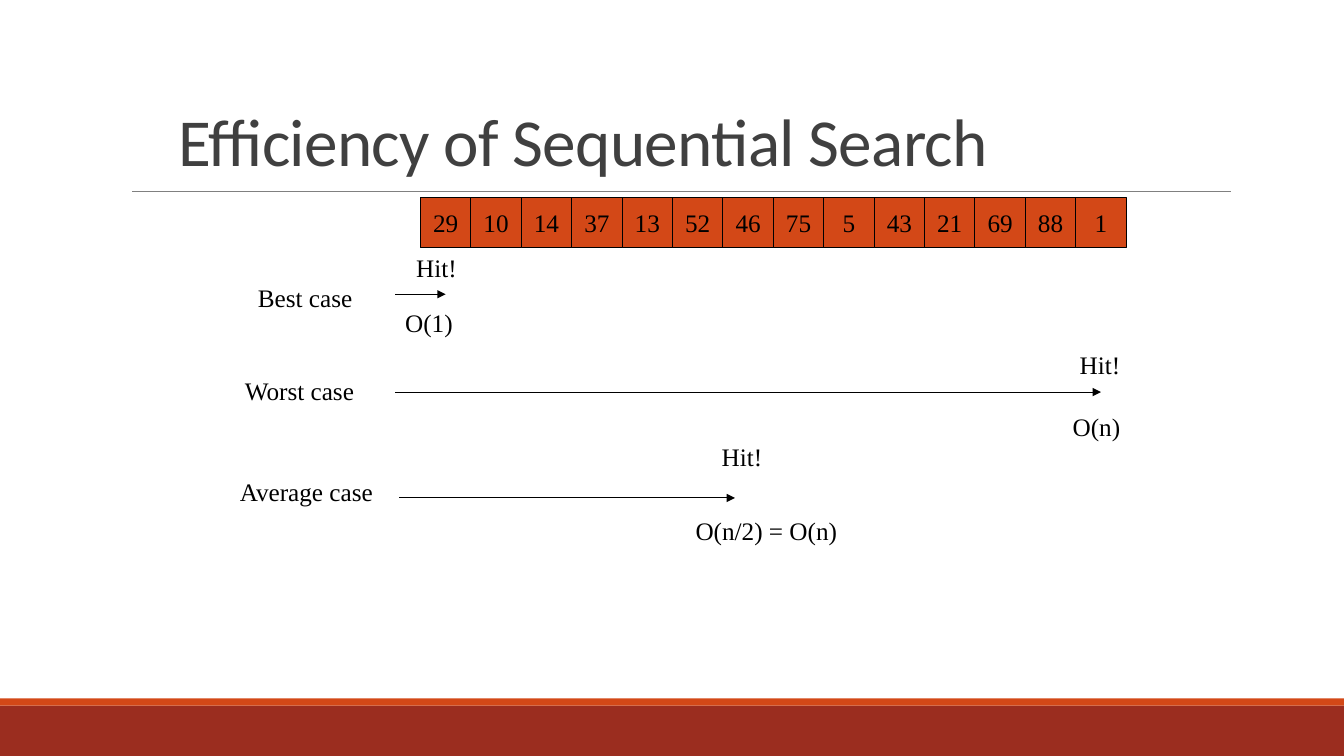
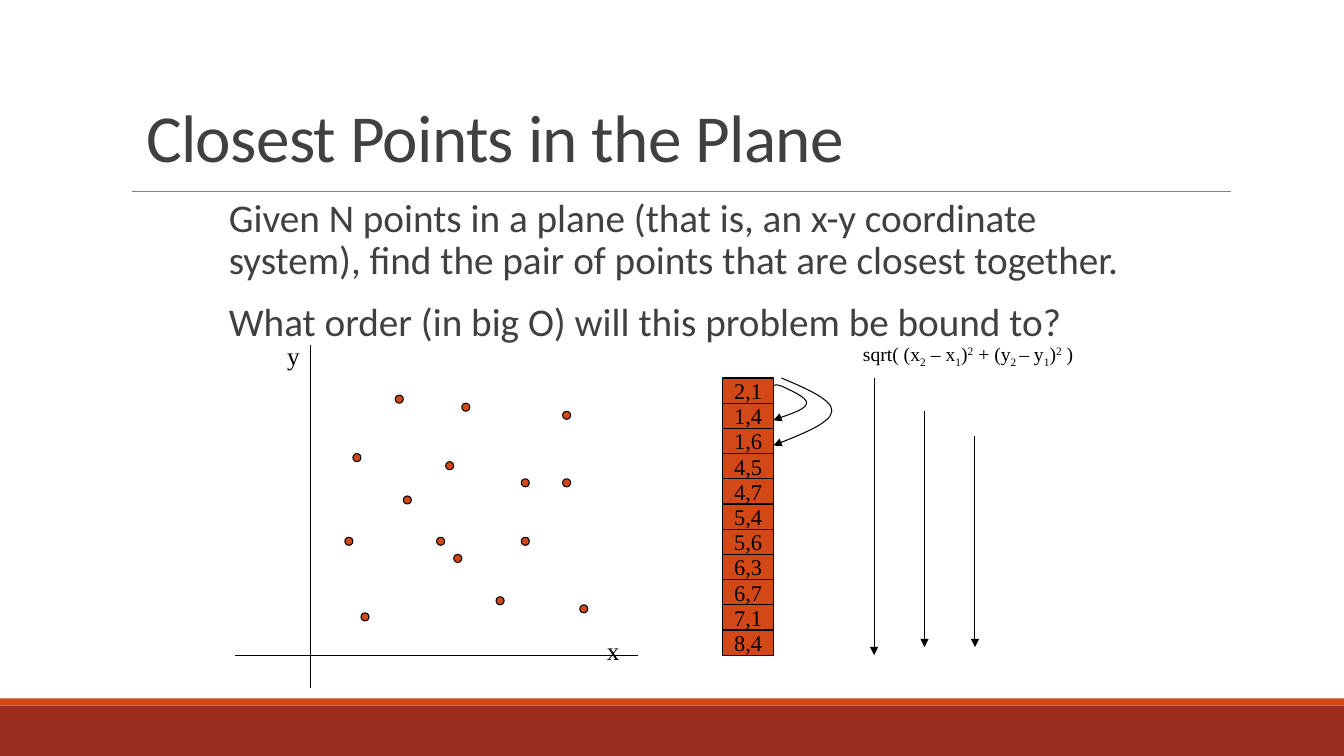
import dataclasses

import lxml.etree
import pptx
import pptx.dml.color
import pptx.enum.shapes
import pptx.enum.text
import pptx.oxml.ns
import pptx.util

Inches = pptx.util.Inches
Pt = pptx.util.Pt
ShapeType = pptx.enum.shapes.MSO_SHAPE
Align = pptx.enum.text.PP_ALIGN
Anchor = pptx.enum.text.MSO_ANCHOR
AutoSize = pptx.enum.text.MSO_AUTO_SIZE


@dataclasses.dataclass(frozen=True)
class Theme:
    accent: str = "D34817"
    footer: str = "9B2D1F"
    rule: str = "808080"
    heading: str = "404040"
    ink: str = "000000"
    sans: str = "Calibri"
    serif: str = "Times New Roman"
    title_size: float = 48
    body_size: float = 28
    label_size: float = 18
    cell_size: float = 16
    formula_size: float = 14
    line_width: float = 0.75
    rule_width: float = 0.5


THEME = Theme()
SLIDE_WIDTH, SLIDE_HEIGHT = 13.33, 7.5
BANDS = [((0, 7, SLIDE_WIDTH, 0.5), THEME.footer), ((0, 6.93, SLIDE_WIDTH, 0.07), THEME.accent)]
TITLE_RULE = ((1.31, 1.9), (12.21, 1.9))

SEARCH_TITLE = "Efficiency of Sequential Search"
SEARCH_VALUES = [29, 10, 14, 37, 13, 52, 46, 75, 5, 43, 21, 69, 88, 1]
SEARCH_CELL = (4.17, 1.96, 0.5, 0.5)
SEARCH_ARROWS = [
    ((3.92, 2.92), (4.42, 2.92)),
    ((3.92, 3.89), (10.92, 3.89)),
    ((3.96, 4.94), (7.29, 4.94)),
]
SEARCH_LABELS = [
    ("Best case", 2.46, 2.75, 1.15),
    ("Hit!", 4.03, 2.45, 0.61),
    ("O(1)", 3.92, 3, 0.68),
    ("Worst case", 2.33, 3.67, 1.3),
    ("Hit!", 10.61, 3.42, 0.61),
    ("O(n)", 10.54, 4.03, 0.68),
    ("Average case", 2.28, 4.68, 1.54),
    ("Hit!", 7.06, 4.33, 0.61),
    ("O(n/2) = O(n)", 6.8, 5.06, 1.62),
]

POINTS_TITLE = "Closest Points in the Plane"
POINTS_BODY = [
    "Given N points in a plane (that is, an x-y coordinate system), "
    "find the pair of points that are closest together.",
    "What order (in big O) will this problem be bound to?",
]
AXES = [((2.33, 6.5), (6.33, 6.5)), ((3.08, 3.42), (3.08, 6.83))]
AXIS_LABELS = [("x", 5.92, 6.25, 0.33), ("y", 2.75, 3.33, 0.33)]
DOT_SIZE = 0.08
DOTS = [
    (3.5, 4.5), (3.92, 3.92), (3.42, 5.33), (5.17, 5.33), (4.58, 4),
    (4.33, 5.33), (4.5, 5.5), (3.58, 6.08), (5.75, 6), (5.17, 4.75),
    (4.42, 4.58), (5.58, 4.75), (4, 4.92), (5.58, 4.08), (4.92, 5.92),
]
PAIRS = ["2,1", "1,4", "1,6", "4,5", "4,7", "5,4", "5,6", "6,3", "6,7", "7,1", "8,4"]
PAIR_CELL = (7.17, 3.75, 0.5, 0.25)
COMPARISON_CURVES = [
    [(7.67, 3.83), (7.68, 3.82), (7.69, 3.81), (7.75, 3.83), (7.81, 3.86),
     (8.01, 3.94), (8, 4), (7.99, 4.06), (7.83, 4.11), (7.67, 4.17)],
    [(7.75, 3.75), (8.01, 3.86), (8.26, 3.97), (8.25, 4.08),
     (8.24, 4.19), (7.95, 4.31), (7.67, 4.42)],
]
PASS_ARROWS = [
    ((8.67, 3.75), (8.67, 6.5)),
    ((9.17, 4.08), (9.17, 6.42)),
    ((9.67, 4.33), (9.67, 6.42)),
]
SUB, SUPER = -25000, 30000
FORMULA = [
    ("sqrt( (x", 0), ("2", SUB), (" – x", 0), ("1", SUB), (")", 0), ("2", SUPER),
    (" + (y", 0), ("2 ", SUB), ("– y", 0), ("1", SUB), (")", 0), ("2", SUPER), (" )", 0),
]


def rgb(color):
    return pptx.dml.color.RGBColor.from_string(color)


def xml_child(parent, tag, **attributes):
    return lxml.etree.SubElement(parent, pptx.oxml.ns.qn(tag), attributes)


def write_text(shape, paragraphs, *, size, font=THEME.serif, color=THEME.ink, align=Align.LEFT,
               anchor=Anchor.TOP, wrap=False, auto_size=AutoSize.NONE, line_spacing=None,
               before=None, after=None, tracking=None, indent=None):
    frame = shape.text_frame
    frame.word_wrap = wrap
    frame.auto_size = auto_size
    frame.vertical_anchor = anchor
    for index, content in enumerate(paragraphs):
        paragraph = frame.add_paragraph() if index else frame.paragraphs[0]
        paragraph.alignment = align
        paragraph.line_spacing = line_spacing
        paragraph.space_before = before
        paragraph.space_after = after
        if indent is not None:
            properties = paragraph._p.get_or_add_pPr()
            properties.set("marL", str(Inches(indent)))
            properties.set("indent", "0")
            xml_child(properties, "a:buNone")
        for text, baseline in [(content, 0)] if isinstance(content, str) else content:
            run = paragraph.add_run()
            run.text = text
            run.font.size = Pt(size)
            run.font.name = font
            run.font.color.rgb = rgb(color)
            if baseline:
                run._r.get_or_add_rPr().set("baseline", str(baseline))
            if tracking is not None:
                run._r.get_or_add_rPr().set("spc", str(round(tracking * 100)))


def place(shape, box):
    shape.left, shape.top, shape.width, shape.height = map(Inches, box)


def draw_outline(shape, color=THEME.ink, width=THEME.line_width, arrow=False):
    shape.line.color.rgb = rgb(color)
    shape.line.width = Pt(width)
    if arrow:
        line = shape.element.spPr.find(pptx.oxml.ns.qn("a:ln"))
        xml_child(line, "a:tailEnd", type="triangle")


def add_filled(slide, kind, box, color=THEME.accent, outlined=True):
    shape = slide.shapes.add_shape(kind, *map(Inches, box))
    shape.shadow.inherit = False
    shape.fill.solid()
    shape.fill.fore_color.rgb = rgb(color)
    if outlined:
        draw_outline(shape)
    else:
        shape.line.fill.background()
    return shape


def add_line(slide, start, end, **outline):
    connector = slide.shapes.add_connector(
        pptx.enum.shapes.MSO_CONNECTOR.STRAIGHT, *map(Inches, (*start, *end)))
    draw_outline(connector, **outline)
    xml_child(connector.element.spPr, "a:effectLst")
    return connector


def add_label(slide, content, left, top, width, height=0.4, size=THEME.label_size):
    box = slide.shapes.add_textbox(*map(Inches, (left, top, width, height)))
    write_text(box, [content], size=size, auto_size=AutoSize.SHAPE_TO_FIT_TEXT)


def add_cells(slide, values, first_box, step_x, step_y, size):
    left, top, width, height = first_box
    for index, value in enumerate(values):
        box = (left + index * step_x, top + index * step_y, width, height)
        cell = add_filled(slide, ShapeType.RECTANGLE, box)
        write_text(cell, [str(value)], size=size, align=Align.CENTER, anchor=Anchor.MIDDLE)


def add_curve(slide, points):
    start, *rest = [tuple(map(Inches, point)) for point in points]
    builder = slide.shapes.build_freeform(*start)
    builder.add_line_segments(rest, close=False)
    curve = builder.convert_to_shape()
    curve.shadow.inherit = False
    curve.fill.background()
    draw_outline(curve, arrow=True)
    segments = list(curve.element.iter(pptx.oxml.ns.qn("a:lnTo")))
    outline = segments[0].getparent()
    for index in range(0, len(segments), 3):
        bezier = xml_child(outline, "a:cubicBezTo")
        for segment in segments[index:index + 3]:
            bezier.append(segment[0])
            outline.remove(segment)


def add_title(slide, text, box):
    title = slide.shapes.title
    place(title, box)
    write_text(title, [text], size=THEME.title_size, font=THEME.sans, color=THEME.heading,
               anchor=Anchor.BOTTOM, wrap=True, line_spacing=0.85, tracking=-0.5)


def decorate_master(presentation, slide):
    decorations = [add_filled(slide, ShapeType.RECTANGLE, box, color, outlined=False)
                   for box, color in BANDS]
    decorations.append(add_line(slide, *TITLE_RULE, color=THEME.rule, width=THEME.rule_width))
    for shape in decorations:
        presentation.slide_master.shapes.element.append(shape.element)


def build_search_slide(slide):
    add_title(slide, SEARCH_TITLE, (1.67, 0.59, 10, 1.25))
    add_cells(slide, SEARCH_VALUES, SEARCH_CELL, SEARCH_CELL[2], 0, THEME.label_size)
    for start, end in SEARCH_ARROWS:
        add_line(slide, start, end, arrow=True)
    for label in SEARCH_LABELS:
        add_label(slide, *label)


def build_points_slide(slide):
    add_title(slide, POINTS_TITLE, (1.35, 0.55, 8.5, 1.25))
    body = slide.placeholders[1]
    place(body, (2.17, 1.92, 9.17, 1.67))
    body.text_frame.margin_left = body.text_frame.margin_right = 0
    write_text(body, POINTS_BODY, size=THEME.body_size, font=THEME.sans, color=THEME.heading,
               wrap=True, line_spacing=0.9, before=Pt(12), after=Pt(2), indent=0.1)
    for start, end in AXES:
        add_line(slide, start, end)
    for left, top in DOTS:
        add_filled(slide, ShapeType.OVAL, (left, top, DOT_SIZE, DOT_SIZE))
    for label in AXIS_LABELS:
        add_label(slide, *label)
    add_cells(slide, PAIRS, PAIR_CELL, 0, PAIR_CELL[3], THEME.cell_size)
    for points in COMPARISON_CURVES:
        add_curve(slide, points)
    for start, end in PASS_ARROWS:
        add_line(slide, start, end, arrow=True)
    add_label(slide, FORMULA, 8.46, 3.34, 2.35, height=0.34, size=THEME.formula_size)


def main():
    presentation = pptx.Presentation()
    presentation.slide_width = Inches(SLIDE_WIDTH)
    presentation.slide_height = Inches(SLIDE_HEIGHT)
    title_only = presentation.slide_layouts.get_by_name("Title Only")
    title_and_content = presentation.slide_layouts.get_by_name("Title and Content")
    search_slide = presentation.slides.add_slide(title_only)
    decorate_master(presentation, search_slide)
    build_search_slide(search_slide)
    build_points_slide(presentation.slides.add_slide(title_and_content))
    presentation.save("out.pptx")


if __name__ == "__main__":
    main()
